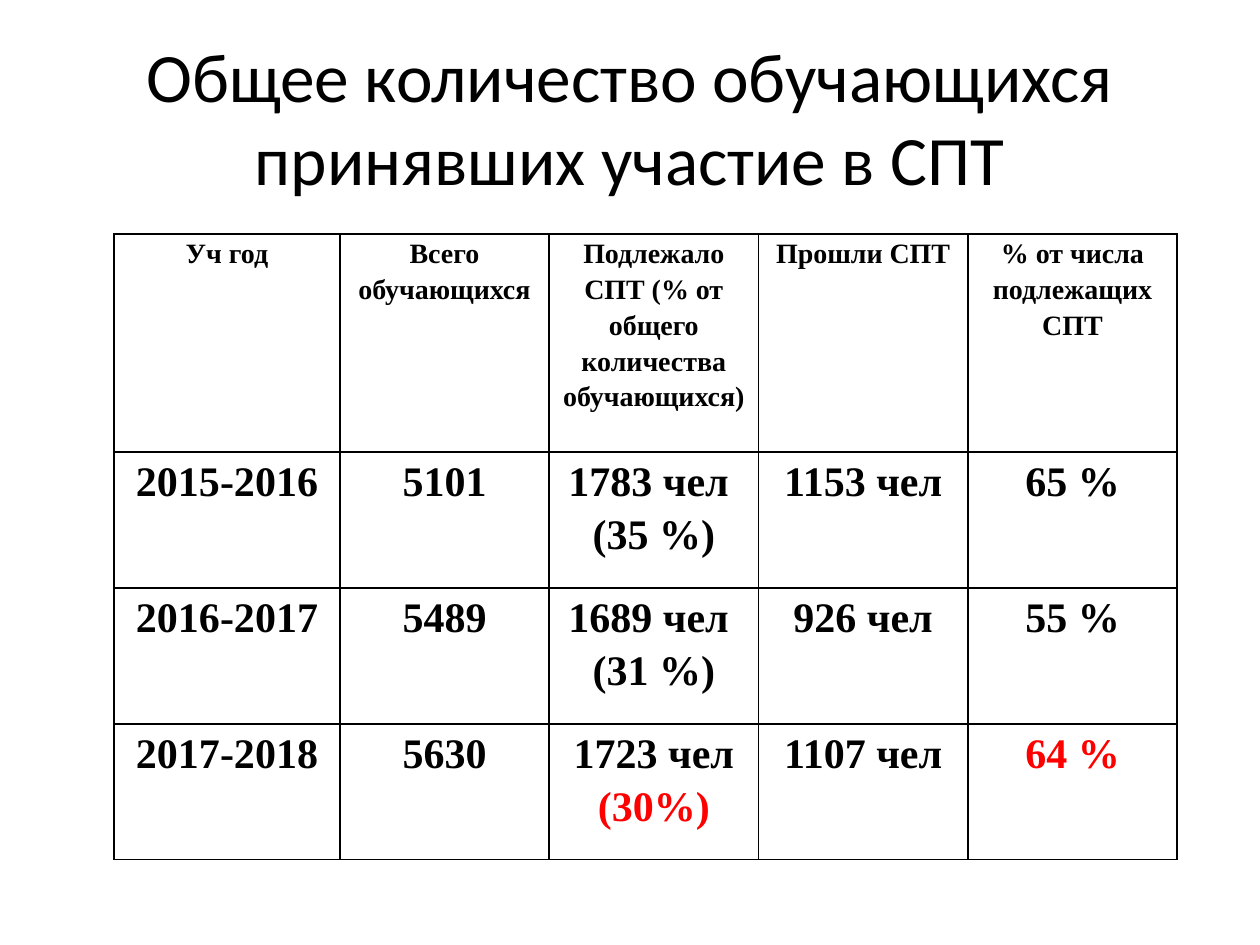
from lxml import etree
from pptx import Presentation
from pptx import util as u
from pptx.dml import color
from pptx.enum import text
from pptx.oxml import ns

COLORS = {"ink": "000000", "accent": "FF0000", "paper": "FFFFFF"}
TITLE = "Общее количество обучающихся принявших участие в СПТ"
ROWS = [
    ["Уч год", "Всего обучающихся",
     "Подлежало СПТ (% от общего количества обучающихся)",
     "Прошли СПТ", "% от числа подлежащих СПТ"],
    ["2015-2016", "5101", "1783 чел \n(35 %)", "1153 чел", "65 %"],
    ["2016-2017", "5489", "1689 чел \n(31 %)", "926 чел", "55 %"],
    ["2017-2018", "5630", "1723 чел\n(30%)", "1107 чел", "64 %"],
]
HIGHLIGHTS = {"(30%)", "64 %"}
COLUMN_WIDTHS = [4.55] + [4.22] * 4
ROW_HEIGHTS = [4.39] + [2.74] * 3
TABLE_LEFT, TABLE_TOP = 2.3, 4.72


def format_paragraph(paragraph, font_name, size, ink, bold=False):
    paragraph.alignment = text.PP_ALIGN.CENTER
    for run in paragraph.runs:
        run.font.name = font_name
        run.font.size = u.Pt(size)
        run.font.bold = bold
        run.font.color.rgb = color.RGBColor.from_string(COLORS[ink])


def add_borders(cell):
    properties = cell._tc.get_or_add_tcPr()
    for position, side in enumerate(("lnL", "lnR", "lnT", "lnB")):
        line = etree.Element(ns.qn(f"a:{side}"), w=str(u.Pt(1)))
        fill = etree.SubElement(line, ns.qn("a:solidFill"))
        etree.SubElement(fill, ns.qn("a:srgbClr"), val=COLORS["ink"])
        properties.insert(position, line)


def fill_cell(cell, content, size):
    cell.fill.solid()
    cell.fill.fore_color.rgb = color.RGBColor.from_string(COLORS["paper"])
    cell.margin_left = cell.margin_right = u.Cm(0.18)
    cell.margin_top = cell.margin_bottom = 0
    cell.text_frame.text = content
    for paragraph in cell.text_frame.paragraphs:
        paragraph.line_spacing = 1.15
        ink = "accent" if paragraph.text in HIGHLIGHTS else "ink"
        format_paragraph(paragraph, "Times New Roman", size, ink, bold=True)
    add_borders(cell)


def add_title(slide):
    title = slide.shapes.add_textbox(u.Cm(1.27), u.Cm(0.76), u.Cm(22.86), u.Cm(3.18))
    frame = title.text_frame
    frame.word_wrap = True
    frame.vertical_anchor = text.MSO_ANCHOR.MIDDLE
    frame.text = TITLE
    format_paragraph(frame.paragraphs[0], "Calibri", 39.6, "ink")


def add_results(slide):
    table = slide.shapes.add_table(
        len(ROWS), len(COLUMN_WIDTHS), u.Cm(TABLE_LEFT), u.Cm(TABLE_TOP),
        u.Cm(sum(COLUMN_WIDTHS)), u.Cm(sum(ROW_HEIGHTS))).table
    for column, width in zip(table.columns, COLUMN_WIDTHS):
        column.width = u.Cm(width)
    for index, (row, height, contents) in enumerate(zip(table.rows, ROW_HEIGHTS, ROWS)):
        row.height = u.Cm(height)
        for cell, content in zip(row.cells, contents):
            fill_cell(cell, content, 24 if index else 16)


def main():
    presentation = Presentation()
    presentation.slide_width, presentation.slide_height = u.Cm(25.4), u.Cm(19.05)
    slide = presentation.slides.add_slide(presentation.slide_layouts[6])
    add_title(slide)
    add_results(slide)
    presentation.save("out.pptx")


if __name__ == "__main__":
    main()
